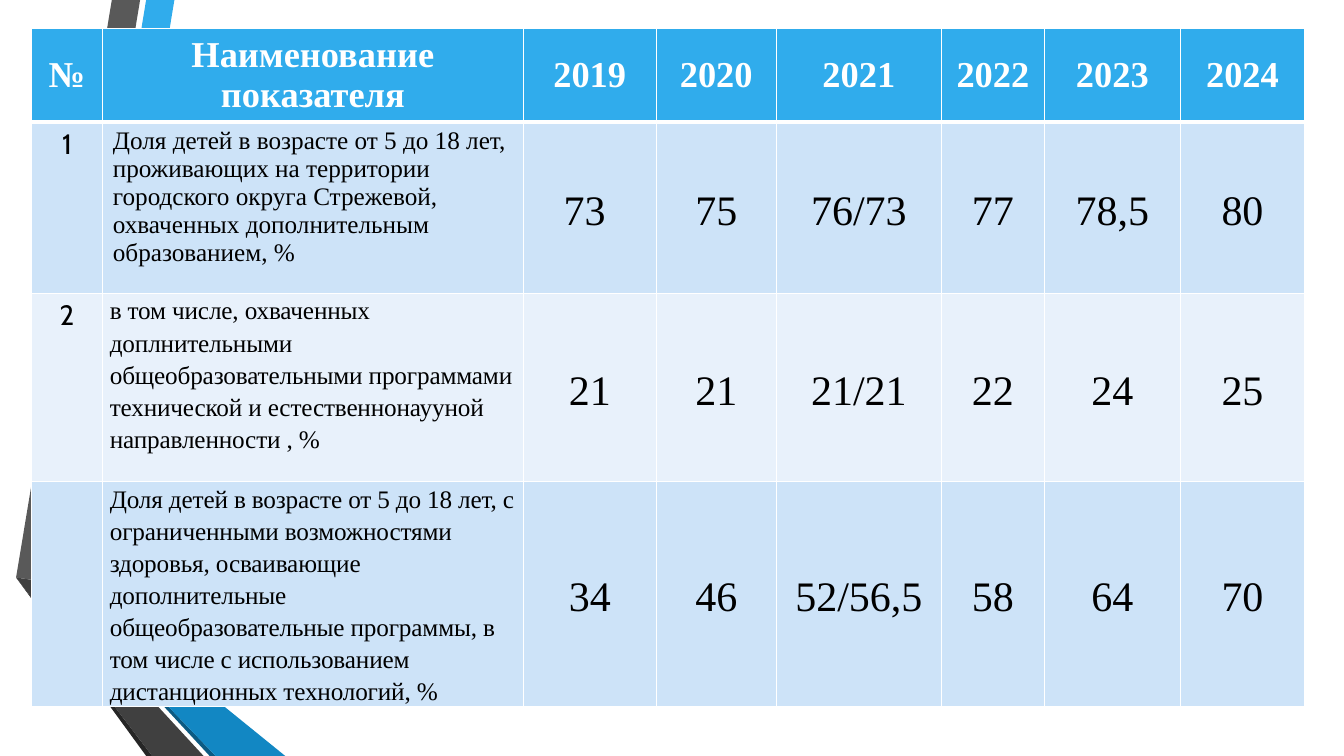
from lxml.etree import SubElement
from pptx import Presentation
from pptx.dml.color import RGBColor
from pptx.enum.text import MSO_ANCHOR, PP_ALIGN
from pptx.oxml.ns import qn
from pptx.util import Inches, Pt

COLORS = {
    "white": "FFFFFF", "black": "000000", "header": "30ACEC",
    "band": "CDE3F8", "light_band": "E8F1FB", "gray": "595959",
    "dark_gray": "404040", "gray_edge": "262626",
    "dark_blue": "1287C3", "blue_edge": "0C5A82",
}
RIBBONS = [
    ("header", [(0.5, 5.78), (0.77, 5.83), (1.73, 0), (1.45, 0)]),
    ("gray", [(1.39, 0), (1.11, 0), (0.16, 5.73), (0.44, 5.77)]),
    ("gray_edge", [(0.16, 5.73), (1.45, 7.5), (1.51, 7.5)]),
    ("blue_edge", [(0.5, 5.79), (2.08, 7.5), (2.14, 7.5)]),
    ("dark_blue", [(0.5, 5.79), (2.14, 7.5), (2.83, 7.5), (0.77, 5.83), (0.5, 5.78)]),
    ("dark_gray", [(2.02, 7.5), (0.48, 5.83), (0.43, 5.77), (0.16, 5.73), (1.51, 7.5)]),
]
ROWS = [
    ["№", "Наименование показателя", "2019", "2020", "2021", "2022", "2023", "2024"],
    ["1", "Доля детей в возрасте от 5 до 18 лет, проживающих на территории городского округа "
          "Стрежевой, охваченных дополнительным образованием, %",
     "73 ", "75", "76/73", "77", "78,5", "80"],
    ["2", "в том числе, охваченных доплнительными общеобразовательными программами "
          "технической и естественнонаууной направленности , %",
     "21", "21", "21/21", "22", "24", "25"],
    ["", "Доля детей в возрасте от 5 до 18 лет, с ограниченными возможностями здоровья, "
         "осваивающие дополнительные общеобразовательные программы, в том числе с "
         "использованием дистанционных технологий, %",
     "34", "46", "52/56,5", "58", "64", "70"],
]
COLUMN_WIDTHS = [0.71, 4.17, 1.32, 1.19, 1.64, 1.02, 1.35, 1.23]
ROW_HEIGHTS = [0.93, 1.7, 1.87, 1.98]
ROW_FILLS = ["header", "band", "light_band", "band"]
SERIF = "Times New Roman"


def add_ribbon(slide, color, points):
    corners = [(Inches(x), Inches(y)) for x, y in points]
    builder = slide.shapes.build_freeform(*corners[0], scale=1.0)
    builder.add_line_segments(corners[1:], close=True)
    shape = builder.convert_to_shape()
    shape.shadow.inherit = False
    shape.fill.solid()
    shape.fill.fore_color.rgb = RGBColor.from_string(COLORS[color])
    shape.line.fill.background()


def add_borders(cell, row):
    properties = cell._tc.get_or_add_tcPr()
    thick_side = {0: "lnB", 1: "lnT"}.get(row)
    for side in ("lnL", "lnR", "lnT", "lnB"):
        width = Pt(3 if side == thick_side else 1)
        border = SubElement(properties, qn(f"a:{side}"), w=str(width))
        fill = SubElement(border, qn("a:solidFill"))
        SubElement(fill, qn("a:srgbClr"), val=COLORS["white"])


def cell_font(row, column):
    if row == 0:
        return SERIF, 26
    if column == 0:
        return "Cabin", 20
    return SERIF, 18 if column == 1 else 30


def fill_cell(cell, row, column, text):
    add_borders(cell, row)
    cell.fill.solid()
    cell.fill.fore_color.rgb = RGBColor.from_string(COLORS[ROW_FILLS[row]])
    is_header, is_value = row == 0, row > 0 and column > 1
    is_spaced_name = row > 1 and column == 1
    if is_header or is_value:
        cell.vertical_anchor = MSO_ANCHOR.MIDDLE
    if is_value or is_spaced_name:
        cell.margin_left = cell.margin_right = Inches(0.07)
        cell.margin_top = cell.margin_bottom = 0
    cell.text_frame.text = text
    paragraph = cell.text_frame.paragraphs[0]
    if is_header or column != 1:
        paragraph.alignment = PP_ALIGN.CENTER
    if is_value or is_spaced_name:
        paragraph.line_spacing = 1.15
    name, size = cell_font(row, column)
    for run in paragraph.runs:
        run.font.name, run.font.size = name, Pt(size)
        run.font.bold = is_header
        run.font.color.rgb = RGBColor.from_string(COLORS["white" if is_header else "black"])
        if is_spaced_name:
            run.font._element.set("spc", "-10")


def add_indicator_table(slide):
    frame = slide.shapes.add_table(
        len(ROWS), len(COLUMN_WIDTHS), Inches(0.31), Inches(0.28),
        Inches(sum(COLUMN_WIDTHS)), Inches(sum(ROW_HEIGHTS)))
    table = frame.table
    for column, width in zip(table.columns, COLUMN_WIDTHS):
        column.width = Inches(width)
    for row, height in zip(table.rows, ROW_HEIGHTS):
        row.height = Inches(height)
    for row, texts in enumerate(ROWS):
        for column, text in enumerate(texts):
            fill_cell(table.cell(row, column), row, column, text)


def main():
    """Build the slide with indicators of children's additional education."""
    presentation = Presentation()
    presentation.slide_width = Inches(13.33)
    presentation.slide_height = Inches(7.5)
    slide = presentation.slides.add_slide(presentation.slide_layouts[6])
    for color, points in RIBBONS:
        add_ribbon(slide, color, points)
    add_indicator_table(slide)
    presentation.save("out.pptx")


if __name__ == "__main__":
    main()
